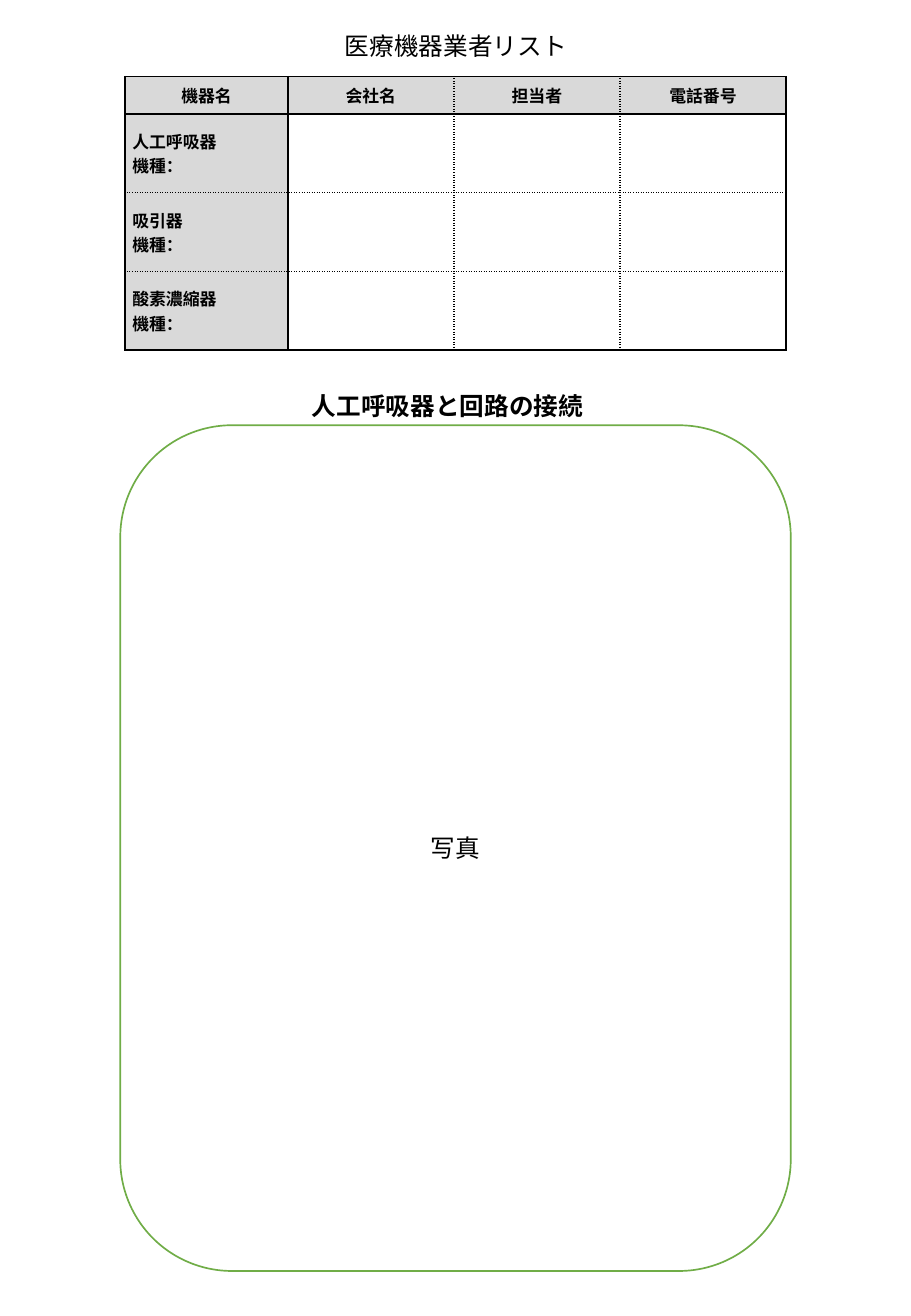
from dataclasses import dataclass

from lxml import etree
from pptx import Presentation, util as u
from pptx.dml.color import RGBColor
from pptx.enum import shapes, text
from pptx.oxml import ns


@dataclass(frozen=True)
class Theme:
    font: str = "Calibri"
    ink: str = "000000"
    paper: str = "FFFFFF"
    label_fill: str = "D9D9D9"
    frame: str = "70AD47"
    heading_size: float = 14.6
    table_size: float = 10
    rule: float = 1


class Page:
    """Places elements on a grid of 75 columns by 108.3 rows."""
    COLUMNS, ROWS = 75, 108.3

    def __init__(self, deck, theme):
        self.theme = theme
        self.column = deck.slide_width / self.COLUMNS
        self.row = deck.slide_height / self.ROWS
        self.slide = deck.slides.add_slide(deck.slide_layouts[5])

    def box(self, left, top, width, height):
        return (u.Emu(round(left * self.column)), u.Emu(round(top * self.row)),
                u.Emu(round(width * self.column)), u.Emu(round(height * self.row)))

    def add_lines(self, frame, lines, size, bold=False, align=text.PP_ALIGN.CENTER):
        frame.word_wrap = True
        for index, line in enumerate(lines):
            paragraph = frame.add_paragraph() if index else frame.paragraphs[0]
            paragraph.alignment = align
            run = paragraph.add_run()
            run.text = line
            run.font.name, run.font.size, run.font.bold = self.theme.font, u.Pt(size), bold
            run.font.color.rgb = RGBColor.from_string(self.theme.ink)

    def heading(self, holder, wording, bold=False):
        frame = holder.text_frame
        self.add_lines(frame, [wording], self.theme.heading_size, bold)
        frame.vertical_anchor = text.MSO_ANCHOR.TOP
        frame.auto_size = text.MSO_AUTO_SIZE.SHAPE_TO_FIT_TEXT

    def title(self, wording, *place):
        holder = self.slide.shapes.title
        holder.left, holder.top, holder.width, holder.height = self.box(*place)
        self.heading(holder, wording)

    def subtitle(self, wording, *place):
        self.heading(self.slide.shapes.add_textbox(*self.box(*place)), wording, bold=True)

    def photo_frame(self, wording, *place):
        frame = self.slide.shapes.add_shape(
            shapes.MSO_SHAPE.ROUNDED_RECTANGLE, *self.box(*place))
        frame.shadow.inherit = False
        frame.fill.solid()
        frame.fill.fore_color.rgb = RGBColor.from_string(self.theme.paper)
        frame.line.color.rgb = RGBColor.from_string(self.theme.frame)
        frame.line.width = u.Pt(self.theme.rule)
        frame.text_frame.vertical_anchor = text.MSO_ANCHOR.MIDDLE
        self.add_lines(frame.text_frame, [wording], self.theme.heading_size)

    def border(self, cell, side, dotted):
        line = etree.SubElement(cell._tc.get_or_add_tcPr(), ns.qn(f"a:ln{side}"),
                                w=str(u.Pt(self.theme.rule)))
        fill = etree.SubElement(line, ns.qn("a:solidFill"))
        etree.SubElement(fill, ns.qn("a:srgbClr"), val=self.theme.ink)
        etree.SubElement(line, ns.qn("a:prstDash"), val="sysDot" if dotted else "solid")

    def contact_table(self, headers, devices, place, widths, heights):
        grid = self.slide.shapes.add_table(
            len(heights), len(widths), *self.box(*place)).table
        grid.first_row = grid.horz_banding = False
        for column, width in zip(grid.columns, widths):
            column.width = u.Emu(round(width * self.column))
        for row, height in zip(grid.rows, heights):
            row.height = u.Emu(round(height * self.row))

        for r in range(len(heights)):
            for c in range(len(widths)):
                cell = grid.cell(r, c)
                # Rules between the data cells are dotted, all others solid
                for side, edge, last in (("L", c, len(widths)), ("R", c + 1, len(widths)),
                                         ("T", r, len(heights)), ("B", r + 1, len(heights))):
                    self.border(cell, side, dotted=1 < edge < last)
                if r and c:
                    cell.fill.background()
                    continue
                cell.fill.solid()
                cell.fill.fore_color.rgb = RGBColor.from_string(self.theme.label_fill)
                cell.margin_left = cell.margin_right = u.Inches(0.06)
                cell.margin_top = cell.margin_bottom = 0
                cell.vertical_anchor = text.MSO_ANCHOR.MIDDLE
                lines = [devices[r - 1], "機種："] if r else [headers[c]]
                align = text.PP_ALIGN.JUSTIFY if r else text.PP_ALIGN.CENTER
                self.add_lines(cell.text_frame, lines, self.theme.table_size, True, align)


def main():
    deck = Presentation()
    deck.slide_width, deck.slide_height = u.Inches(7.5), u.Inches(10.83)
    page = Page(deck, Theme())

    # Supplier list
    page.title("医療機器業者リスト", 16.6, 2, 41.9, 3.5)
    page.contact_table(
        headers=["機器名", "会社名", "担当者", "電話番号"],
        devices=["人工呼吸器", "吸引器", "酸素濃縮器"],
        place=(10.3, 6.3, 54.4, 22.5),
        widths=[13.4] + [13.67] * 3,
        heights=[3.08] + [6.48] * 3)

    # Ventilator circuit photo
    page.subtitle("人工呼吸器と回路の接続", 15.9, 31.7, 41.9, 3.5)
    page.photo_frame("写真", 9.9, 35, 55.2, 69.6)

    deck.save("out.pptx")


if __name__ == "__main__":
    main()
